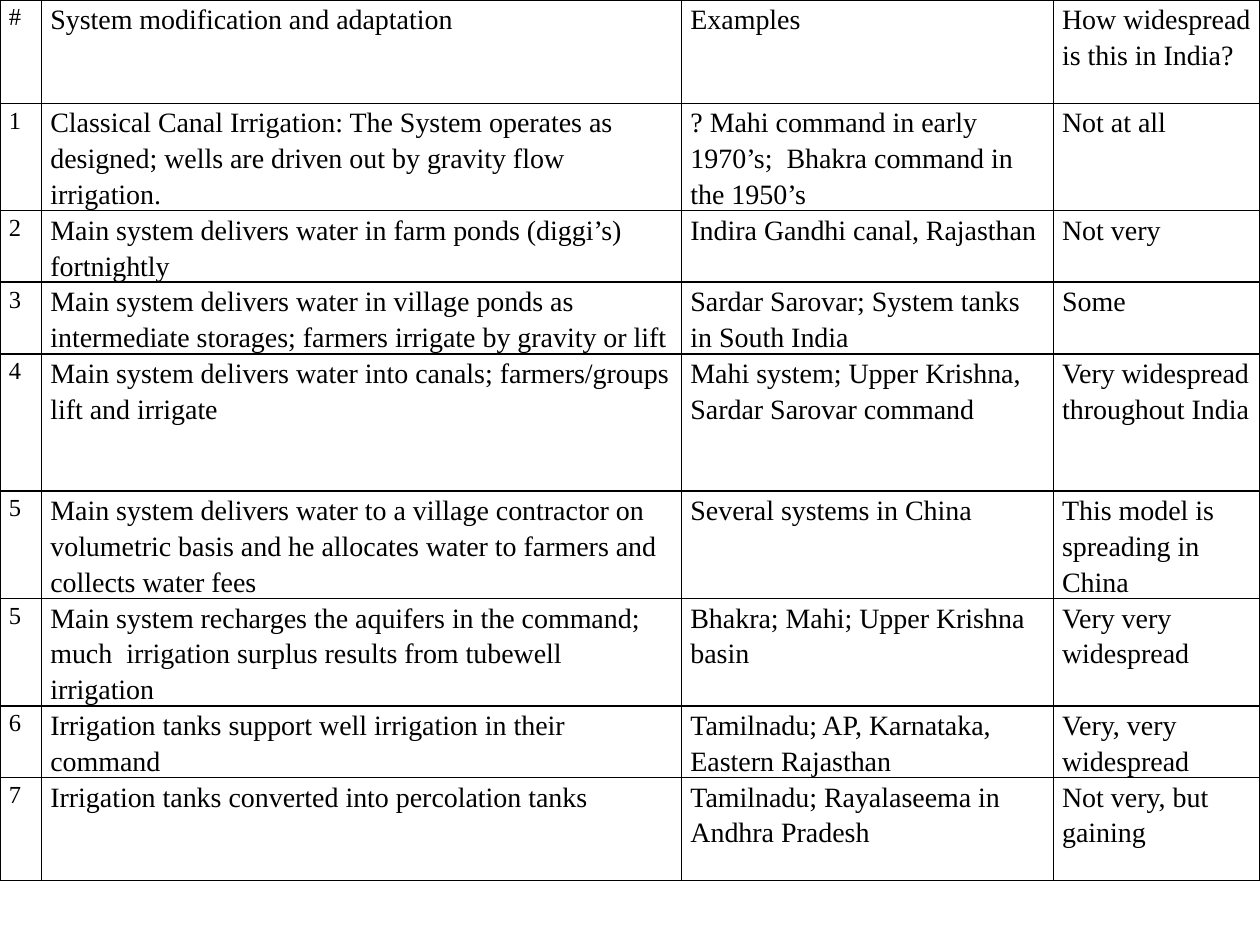
from lxml.etree import SubElement
from pptx import Presentation
from pptx.dml.color import RGBColor
from pptx.oxml.ns import qn
from pptx.util import Inches, Pt

BLACK = RGBColor(0x00, 0x00, 0x00)
WHITE = RGBColor(0xFF, 0xFF, 0xFF)
FONT = "Times New Roman"
COLUMN_WIDTHS = [0.33, 5.08, 2.95, 1.64]
ROW_HEIGHTS = [0.82, 0.82, 0.54, 0.54, 1.09, 0.82, 0.54, 0.54, 0.82]
ROWS = [
    ("#", "System modification and adaptation", "Examples",
     "How widespread is this in India?"),
    ("1", "Classical Canal Irrigation: The System operates as designed; "
     "wells are driven out by gravity flow irrigation.",
     "? Mahi command in early 1970’s;  Bhakra command in the 1950’s",
     "Not at all"),
    ("2", "Main system delivers water in farm ponds (diggi’s) fortnightly",
     "Indira Gandhi canal, Rajasthan", "Not very"),
    ("3", "Main system delivers water in village ponds as intermediate "
     "storages; farmers irrigate by gravity or lift",
     "Sardar Sarovar; System tanks in South India", "Some"),
    ("4", "Main system delivers water into canals; farmers/groups lift and irrigate",
     "Mahi system; Upper Krishna, Sardar Sarovar command",
     "Very widespread throughout India"),
    ("5", "Main system delivers water to a village contractor on volumetric "
     "basis and he allocates water to farmers and collects water fees",
     "Several systems in China", "This model is spreading in China"),
    ("5", "Main system recharges the aquifers in the command; "
     "much  irrigation surplus results from tubewell irrigation",
     "Bhakra; Mahi; Upper Krishna basin", "Very very widespread"),
    ("6", "Irrigation tanks support well irrigation in their command",
     "Tamilnadu; AP, Karnataka, Eastern Rajasthan", "Very, very widespread"),
    ("7", "Irrigation tanks converted into percolation tanks",
     "Tamilnadu; Rayalaseema in Andhra Pradesh", "Not very, but gaining"),
]


def add_borders(cell):
    """Draw a thin black line on all four sides of a cell."""
    properties = cell._tc.get_or_add_tcPr()
    for position, side in enumerate(("a:lnL", "a:lnR", "a:lnT", "a:lnB")):
        line = SubElement(properties, qn(side), w=str(Pt(1)))
        fill = SubElement(line, qn("a:solidFill"))
        SubElement(fill, qn("a:srgbClr"), val=str(BLACK))
        properties.insert(position, line)


def fill_cell(cell, text, size):
    """Write and format the text of one cell."""
    cell.margin_left = cell.margin_right = Inches(0.07)
    cell.margin_top = cell.margin_bottom = 0
    cell.fill.solid()
    cell.fill.fore_color.rgb = WHITE
    add_borders(cell)
    para = cell.text_frame.paragraphs[0]
    para.line_spacing = 1.15
    span = para.add_run()
    span.text = text
    span.font.name = FONT
    span.font.size = Pt(size)
    span.font.bold = False
    span.font.color.rgb = BLACK


def add_irrigation_table(page, left, top, width, height):
    """Place the table of irrigation system adaptations."""
    frame = page.shapes.add_table(
        len(ROWS), len(COLUMN_WIDTHS), left, top, width, height)
    table = frame.table
    table.first_row = table.horz_banding = False
    for column, column_width in zip(table.columns, COLUMN_WIDTHS):
        column.width = Inches(column_width)
    for row, row_height, texts in zip(table.rows, ROW_HEIGHTS, ROWS):
        row.height = Inches(row_height)
        for index, (cell, text) in enumerate(zip(row.cells, texts)):
            fill_cell(cell, text, 14 if index == 0 else 16)


def main():
    """Build the deck and save it."""
    deck = Presentation()
    deck.slide_width, deck.slide_height = Inches(10), Inches(7.5)
    page = deck.slides.add_slide(deck.slide_layouts[6])
    add_irrigation_table(page, 0, 0, deck.slide_width, Inches(sum(ROW_HEIGHTS)))
    deck.save("out.pptx")


if __name__ == "__main__":
    main()
